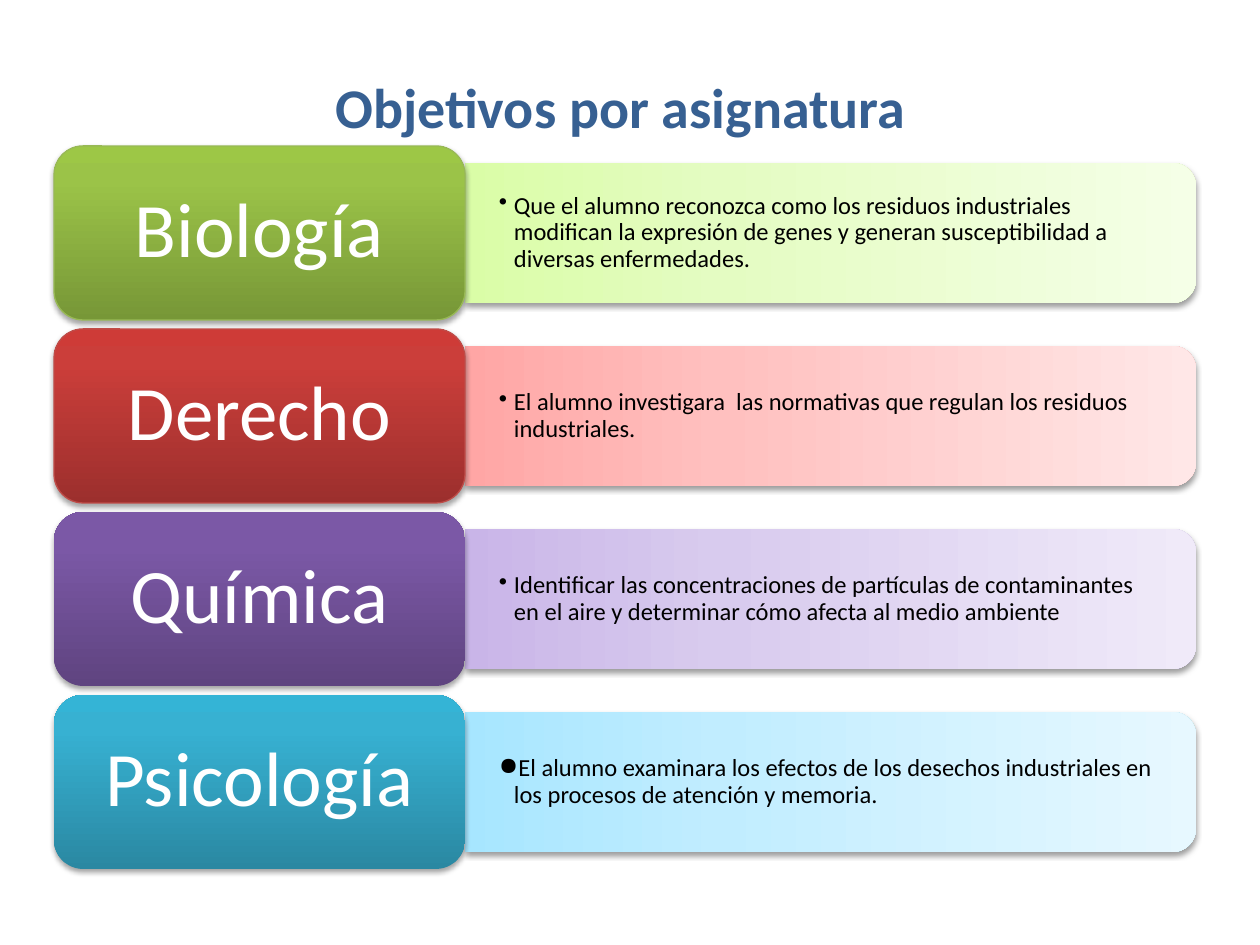
from copy import deepcopy

from lxml.etree import SubElement
from pptx import Presentation
from pptx.dml.color import RGBColor
from pptx.enum.shapes import MSO_SHAPE
from pptx.enum.text import MSO_ANCHOR, MSO_AUTO_SIZE, PP_ALIGN
from pptx.oxml.ns import qn
from pptx.util import Emu, Pt

PX = 914400 / 126
FONT = "Calibri"

WHITE = RGBColor(0xFF, 0xFF, 0xFF)
BLACK = RGBColor(0x00, 0x00, 0x00)
TITLE_BLUE = RGBColor(0x37, 0x60, 0x92)

GREEN_LINE = RGBColor(0x98, 0xB9, 0x55)
RED_LINE = RGBColor(0xBF, 0x4C, 0x48)
GREEN = [RGBColor(0x77, 0x97, 0x37), RGBColor(0x9B, 0xC3, 0x48), RGBColor(0x9D, 0xC7, 0x46)]
RED = [RGBColor(0x9C, 0x2F, 0x2D), RGBColor(0xCB, 0x3E, 0x3A), RGBColor(0xCE, 0x3B, 0x37)]
PURPLE = [RGBColor(0x5F, 0x44, 0x80), RGBColor(0x7B, 0x58, 0xA6), RGBColor(0x7C, 0x57, 0xA8)]
CYAN = [RGBColor(0x2A, 0x88, 0xA2), RGBColor(0x37, 0xB1, 0xD2), RGBColor(0x34, 0xB4, 0xD6)]
PALE_GREEN = [RGBColor(0xDA, 0xFD, 0xA7), RGBColor(0xE4, 0xFC, 0xC2), RGBColor(0xF5, 0xFF, 0xE7)]
PALE_RED = [RGBColor(0xFF, 0xA6, 0xA5), RGBColor(0xFF, 0xC0, 0xBF), RGBColor(0xFF, 0xE7, 0xE7)]
PALE_PURPLE = [RGBColor(0xC9, 0xB5, 0xE8), RGBColor(0xD8, 0xCB, 0xEE), RGBColor(0xF0, 0xEA, 0xF9)]
PALE_CYAN = [RGBColor(0xA7, 0xE6, 0xFF), RGBColor(0xC1, 0xED, 0xFF), RGBColor(0xE7, 0xF8, 0xFF)]

# subject, label gradient, label outline, bar gradient, bullet, objective
SUBJECTS = [
    ("Biología", GREEN, GREEN_LINE, PALE_GREEN, "•",
     "Que el alumno reconozca como los residuos industriales modifican la "
     "expresión de genes y generan susceptibilidad a diversas enfermedades."),
    ("Derecho", RED, RED_LINE, PALE_RED, "•",
     "El alumno investigara  las normativas que regulan los residuos industriales."),
    ("Química", PURPLE, None, PALE_PURPLE, "•",
     "Identificar las concentraciones de partículas de contaminantes en el aire "
     "y determinar cómo afecta al medio ambiente"),
    ("Psicología", CYAN, None, PALE_CYAN, "●",
     "El alumno examinara los efectos de los desechos industriales en los "
     "procesos de atención y memoria."),
]


def px(n):
    return Emu(round(n * PX))


def add_panel(s, shape, box, colors, middle, shadow, line=None):
    """Shape with a three-stop gradient rising from its bottom edge and a soft shadow.

    middle is the position of the second stop; shadow is (distance in pt, opacity in %).
    """
    sp = s.shapes.add_shape(shape, *map(px, box))
    sp.fill.gradient()
    sp.fill.gradient_angle = 90
    stops = sp._element.spPr.find(".//" + qn("a:gsLst"))
    stops.append(deepcopy(stops[0]))
    for stop, color, position in zip(sp.fill.gradient_stops, colors, (0, middle, 1)):
        stop.color.rgb = color
        stop.position = position
    if line is None:
        sp.line.fill.background()
    else:
        sp.line.color.rgb = line
        sp.line.width = Pt(0.75)

    sp.shadow.inherit = False
    distance, opacity = shadow
    effects = sp._element.spPr.find(qn("a:effectLst"))
    outer = SubElement(effects, qn("a:outerShdw"), blurRad=str(Pt(3.1)),
                       dist=str(Pt(distance)), dir="5400000", rotWithShape="0")
    black = SubElement(outer, qn("a:srgbClr"), val="000000")
    SubElement(black, qn("a:alpha"), val=str(opacity * 1000))
    return sp


def add_text(s, box, text, size, color, insets=None):
    tf = s.shapes.add_textbox(*map(px, box)).text_frame
    tf.word_wrap = True
    p = tf.paragraphs[0]
    p.text = text
    if insets:
        tf.vertical_anchor = MSO_ANCHOR.MIDDLE
        tf.margin_left = tf.margin_right = px(insets[0])
        tf.margin_top = tf.margin_bottom = px(insets[1])
        p.line_spacing = 0.9
    p.font.name = FONT
    p.font.size = Pt(size)
    p.font.color.rgb = color
    return tf


def add_bullet(p, char, indent):
    p.level = 1
    pPr = p._p.get_or_add_pPr()
    pPr.set("marL", str(px(indent)))
    pPr.set("indent", str(-px(indent)))
    bullet = pPr.makeelement(qn("a:buChar"), {"char": char})
    pPr.find(qn("a:defRPr")).addprevious(bullet)


def add_title(s, box):
    tf = add_text(s, box, "Objetivos por asignatura", 32, TITLE_BLUE)
    tf.auto_size = MSO_AUTO_SIZE.SHAPE_TO_FIT_TEXT
    p = tf.paragraphs[0]
    p.alignment = PP_ALIGN.CENTER
    p.font.bold = True


def add_bar(s, box, colors, bullet, objective):
    x, y, w, h = box
    upright = (x + (w - h) / 2, y + (h - w) / 2, h, w)
    sp = add_panel(s, MSO_SHAPE.ROUND_2_SAME_RECTANGLE, upright, colors, 0.35, (1.6, 38))
    sp.rotation = 90
    tf = add_text(s, (x, y + 7, w - 7, h - 14), objective, 14, BLACK, (34, 18))
    add_bullet(tf.paragraphs[0], bullet, 15)


def add_label(s, box, colors, line, subject):
    x, y, w, h = box
    add_panel(s, MSO_SHAPE.ROUNDED_RECTANGLE, box, colors, 0.8, (1.8, 35), line)
    tf = add_text(s, (x + 8, y + 8, w - 16, h - 16), subject, 44, WHITE, (23, 11))
    tf.paragraphs[0].alignment = PP_ALIGN.CENTER


def add_subject_row(s, box, subject, colors, line, pale, bullet, objective):
    x, y, w, h = box
    label_w, bar_h = 411, 140
    add_bar(s, (x + label_w, y + (h - bar_h) / 2, w - label_w, bar_h), pale, bullet, objective)
    add_label(s, (x, y, label_w, h), colors, line, subject)


def add_subject_list(s, box):
    x, y, w, h = box
    gap = 9
    row_h = (h - gap * (len(SUBJECTS) - 1)) / len(SUBJECTS)
    for i, subject in enumerate(SUBJECTS):
        add_subject_row(s, (x, y + i * (row_h + gap), w, row_h), *subject)


def main():
    prs = Presentation()
    prs.slide_width, prs.slide_height = px(1260), px(945)
    s = prs.slides.add_slide(prs.slide_layouts[6])
    add_subject_list(s, (54, 146, 1142, 723))
    add_title(s, (194, 66, 853, 81))
    prs.save("out.pptx")


if __name__ == "__main__":
    main()
